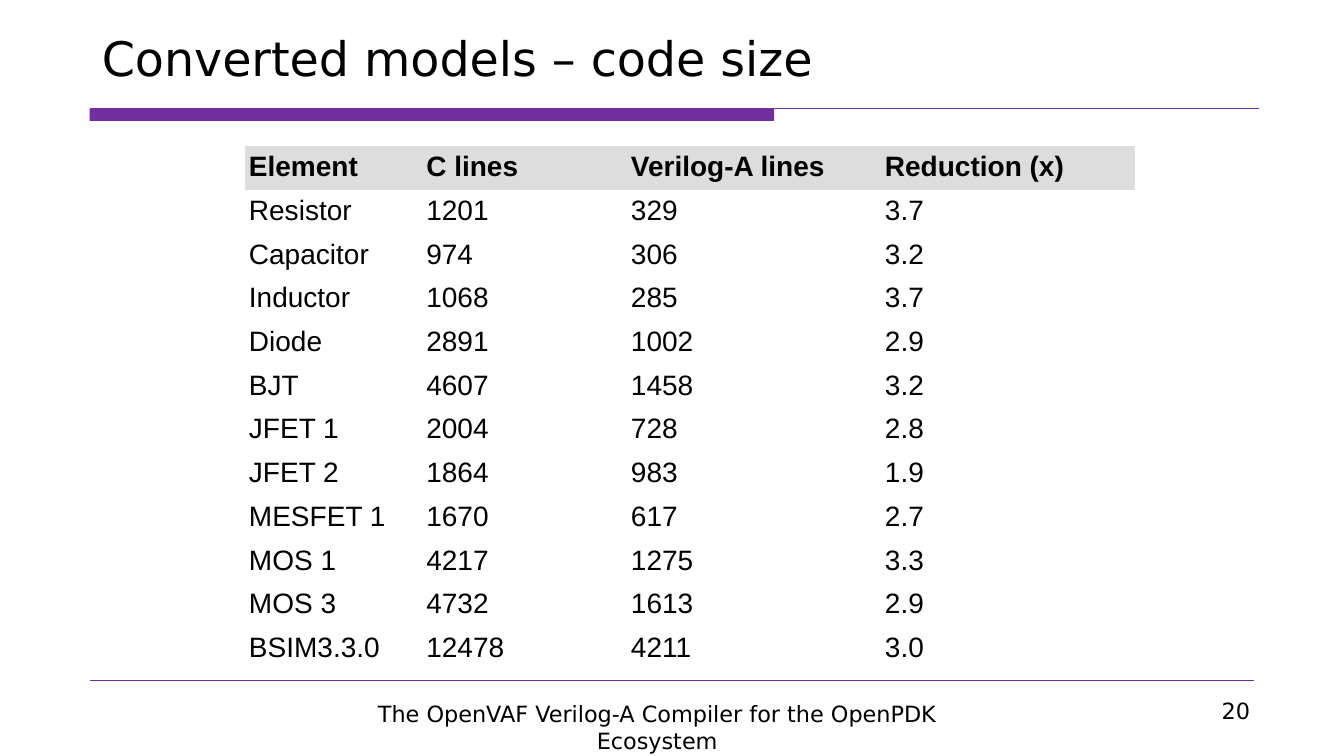
"""Build the slide that compares the code size of converted device models."""
from lxml.etree import SubElement
from pptx import Presentation
from pptx.dml.color import RGBColor
from pptx.enum.shapes import MSO_CONNECTOR, MSO_SHAPE
from pptx.enum.text import MSO_ANCHOR, MSO_AUTO_SIZE, PP_ALIGN
from pptx.oxml.ns import qn
from pptx.util import Pt

COLORS = {"text": "000000", "accent": "7030A0", "header": "DDDDDD"}
PLAIN_TABLE_STYLE = "{2D5ABB26-0587-4C30-8999-92F81FD0307C}"
COLUMN_WIDTHS = [126.72, 146.16, 181.44, 181.44]
ROW_HEIGHT = 29.52
MODELS = [
    ("Element", "C lines", "Verilog-A lines", "Reduction (x)"),
    ("Resistor", "1201", "329", "3.7"),
    ("Capacitor", "974", "306", "3.2"),
    ("Inductor", "1068", "285", "3.7"),
    ("Diode", "2891", "1002", "2.9"),
    ("BJT", "4607", "1458", "3.2"),
    ("JFET 1", "2004", "728", "2.8"),
    ("JFET 2", "1864", "983", "1.9"),
    ("MESFET 1", "1670", "617", "2.7"),
    ("MOS 1", "4217", "1275", "3.3"),
    ("MOS 3", "4732", "1613", "2.9"),
    ("BSIM3.3.0", "12478", "4211", "3.0"),
]


class SlideBuilder:
    """Hold the slide and its style, and add elements with lengths in points."""

    def __init__(self, slide, heading_font="DejaVu Sans", table_font="Arial"):
        self.slide = slide
        self.heading_font = heading_font
        self.table_font = table_font

    def color(self, name):
        return RGBColor.from_string(COLORS[name])

    def add_run(self, frame, text, size, font, align=PP_ALIGN.LEFT, bold=False):
        paragraph = frame.paragraphs[0]
        paragraph.alignment = align
        run = paragraph.add_run()
        run.text = text
        run.font.size = Pt(size)
        run.font.name = font
        run.font.bold = bold
        run.font.color.rgb = self.color("text")

    def title(self, text, left, top, width, height):
        title = self.slide.shapes.title
        title.left, title.top = Pt(left), Pt(top)
        title.width, title.height = Pt(width), Pt(height)
        frame = title.text_frame
        frame.word_wrap = True
        frame.auto_size = MSO_AUTO_SIZE.NONE
        frame.vertical_anchor = MSO_ANCHOR.BOTTOM
        self.add_run(frame, text, 34, self.heading_font)

    def text(self, text, left, top, width, height, align):
        box = self.slide.shapes.add_textbox(Pt(left), Pt(top), Pt(width), Pt(height))
        box.text_frame.word_wrap = True
        self.add_run(box.text_frame, text, 16, self.heading_font, align)

    def bar(self, left, top, width, height):
        bar = self.slide.shapes.add_shape(
            MSO_SHAPE.RECTANGLE, Pt(left), Pt(top), Pt(width), Pt(height))
        bar.shadow.inherit = False
        bar.fill.solid()
        bar.fill.fore_color.rgb = self.color("accent")
        bar.line.fill.background()

    def rule(self, left, right, y, weight):
        rule = self.slide.shapes.add_connector(
            MSO_CONNECTOR.STRAIGHT, Pt(left), Pt(y), Pt(right), Pt(y))
        rule.line.color.rgb = self.color("accent")
        rule.line.width = Pt(weight)
        SubElement(rule._element.spPr, qn("a:effectLst"))

    def table(self, rows, left, top, widths, row_height):
        frame = self.slide.shapes.add_table(
            len(rows), len(widths), Pt(left), Pt(top),
            Pt(sum(widths)), Pt(row_height * len(rows)))
        table = frame.table
        table.horz_banding = False
        table._tbl.tblPr.find(qn("a:tableStyleId")).text = PLAIN_TABLE_STYLE
        for column, width in zip(table.columns, widths):
            column.width = Pt(width)
        for row_index, values in enumerate(rows):
            table.rows[row_index].height = Pt(row_height)
            for column_index, value in enumerate(values):
                self.cell(table.cell(row_index, column_index), value, row_index == 0)

    def cell(self, cell, value, is_header):
        cell.margin_left = cell.margin_right = Pt(2.88)
        cell.margin_top = cell.margin_bottom = Pt(3.6)
        if is_header:
            cell.fill.solid()
            cell.fill.fore_color.rgb = self.color("header")
        else:
            cell.fill.background()
        self.add_run(cell.text_frame, value, 20, self.table_font, bold=is_header)


def main():
    presentation = Presentation()
    presentation.slide_width, presentation.slide_height = Pt(960), Pt(540)
    slide = presentation.slides.add_slide(presentation.slide_layouts[5])
    builder = SlideBuilder(slide)
    builder.bar(64.08, 77.76, 488.88, 8.64)
    builder.rule(64.08, 899.28, 77.76, 0.75)
    builder.rule(64.08, 895.68, 486, 0.25)
    builder.text("20", 786.96, 494.64, 113.04, 28.8, PP_ALIGN.RIGHT)
    builder.text("The OpenVAF Verilog-A Compiler for the OpenPDK Ecosystem",
                 228.24, 496.8, 482.4, 25.92, PP_ALIGN.CENTER)
    builder.title("Converted models – code size", 65.52, 21.6, 627.12, 43.2)
    builder.table(MODELS, 174.96, 104.4, COLUMN_WIDTHS, ROW_HEIGHT)
    presentation.save("out.pptx")


if __name__ == "__main__":
    main()
